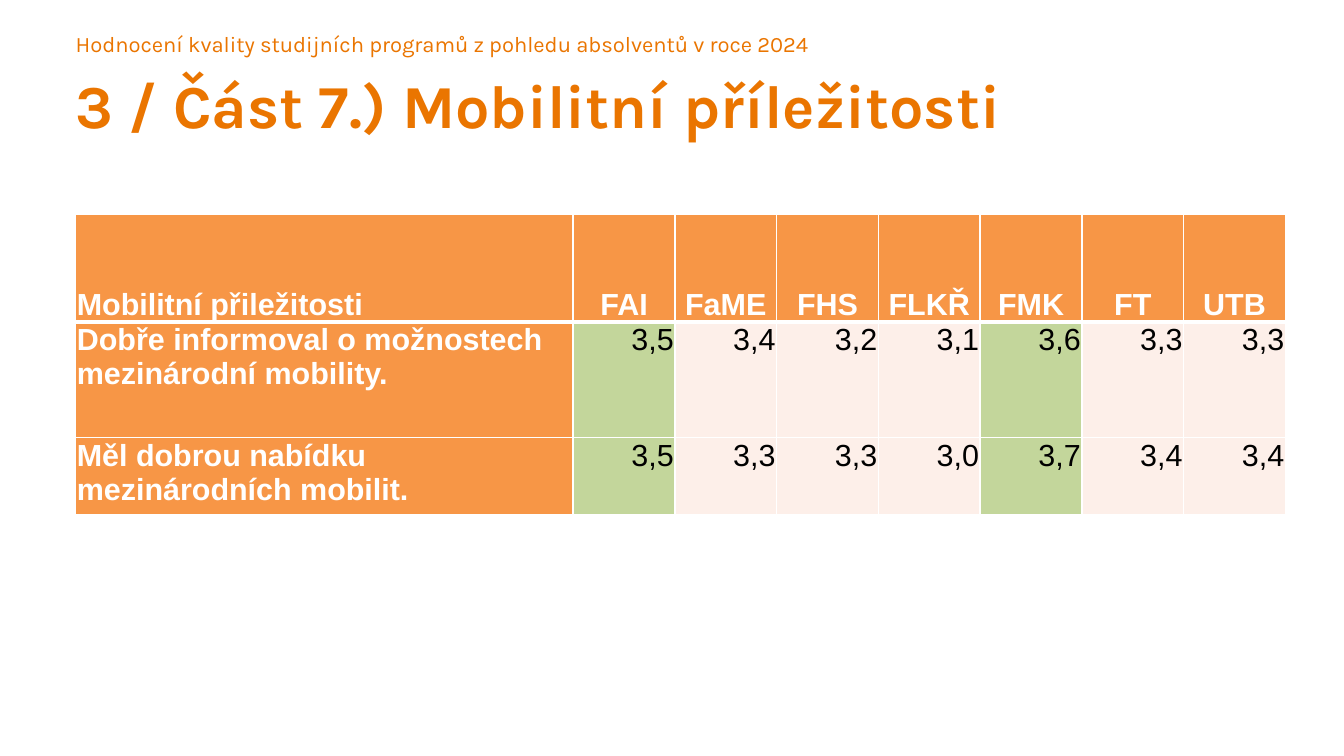
from dataclasses import dataclass

from lxml.etree import SubElement
from pptx import Presentation
from pptx.dml.color import RGBColor
from pptx.enum.text import MSO_ANCHOR as Anchor, PP_ALIGN as Align
from pptx.oxml.ns import qn
from pptx.util import Inches, Pt


@dataclass(frozen=True)
class Theme:
    accent: str = "EA7500"
    header: str = "F79646"
    best: str = "C3D69B"
    plain: str = "FDEFE9"
    white: str = "FFFFFF"
    black: str = "000000"
    heading_font: str = "Karla"
    table_font: str = "Arial"
    kicker_size: int = 13
    title_size: int = 36
    table_size: int = 18


THEME = Theme()
FACULTIES = ["FAI", "FaME", "FHS", "FLKŘ", "FMK", "FT", "UTB"]
BEST_FACULTIES = {"FAI", "FMK"}
RATINGS = {
    "Dobře informoval o možnostech mezinárodní mobility.":
        ["3,5", "3,4", "3,2", "3,1", "3,6", "3,3", "3,3"],
    "Měl dobrou nabídku mezinárodních mobilit.":
        ["3,5", "3,3", "3,3", "3,0", "3,7", "3,4", "3,4"],
}


def write_text(frame, text, *, size, font, color, bold=False, align=Align.LEFT,
               spacing=None):
    frame.word_wrap = True
    paragraph = frame.paragraphs[0]
    paragraph.alignment = align
    paragraph.line_spacing = spacing
    run = paragraph.add_run()
    run.text = text
    run.font.size = Pt(size)
    run.font.name = font
    run.font.bold = bold
    run.font.color.rgb = RGBColor.from_string(color)


def place_heading(shape, box, text, **text_format):
    shape.left, shape.top, shape.width, shape.height = map(Inches, box)
    frame = shape.text_frame
    frame.margin_left = frame.margin_top = 0
    frame.margin_right = frame.margin_bottom = 0
    frame.vertical_anchor = Anchor.TOP
    write_text(frame, text, font=THEME.heading_font, color=THEME.accent,
               **text_format)


def add_headings(slide, box):
    left, top, width, height = box
    kicker = slide.shapes.add_textbox(0, 0, 0, 0)
    place_heading(kicker, (left, top, width, 0.22),
                  "Hodnocení kvality studijních programů z pohledu absolventů v roce 2024",
                  size=THEME.kicker_size)
    place_heading(slide.shapes.title, (left, top + 0.3, width, height - 0.3),
                  "3 / Část 7.) Mobilitní příležitosti",
                  size=THEME.title_size, bold=True)


def draw_borders(cell, bottom):
    properties = cell._tc.get_or_add_tcPr()
    for side, width in (("L", 1), ("R", 1), ("T", 1), ("B", bottom)):
        line = SubElement(properties, qn(f"a:ln{side}"), w=str(Pt(width)))
        fill = SubElement(line, qn("a:solidFill"))
        SubElement(fill, qn("a:srgbClr"), val=THEME.white)


def fill_cell(cell, text, *, fill, side=0.01, top=0.01, anchor=Anchor.TOP,
              bottom_border=1, color=THEME.white, **text_format):
    cell.margin_left = cell.margin_right = Inches(side)
    cell.margin_top, cell.margin_bottom = Inches(top), 0
    cell.vertical_anchor = anchor
    draw_borders(cell, bottom_border)
    cell.fill.solid()
    cell.fill.fore_color.rgb = RGBColor.from_string(fill)
    write_text(cell.text_frame, text, size=THEME.table_size,
               font=THEME.table_font, color=color, **text_format)


def add_ratings_table(slide, box):
    left, top, width, height = box
    row_heights = [0.88, 0.95, height - 0.88 - 0.95]
    label_width = 4.08
    rating_width = (width - label_width) / len(FACULTIES)
    table = slide.shapes.add_table(
        len(RATINGS) + 1, len(FACULTIES) + 1, *map(Inches, box)).table
    for row, row_height in zip(table.rows, row_heights):
        row.height = Inches(row_height)
    for index, column in enumerate(table.columns):
        column.width = Inches(rating_width if index else label_width)

    header = {"fill": THEME.header, "bold": True, "anchor": Anchor.BOTTOM,
              "bottom_border": 3}
    fill_cell(table.cell(0, 0), "Mobilitní přiležitosti", **header)
    for column, faculty in enumerate(FACULTIES, 1):
        fill_cell(table.cell(0, column), faculty, side=0.05, top=0,
                  align=Align.CENTER, spacing=1.5, **header)

    for row, (statement, ratings) in enumerate(RATINGS.items(), 1):
        fill_cell(table.cell(row, 0), statement, fill=THEME.header, bold=True)
        for column, (faculty, rating) in enumerate(zip(FACULTIES, ratings), 1):
            fill = THEME.best if faculty in BEST_FACULTIES else THEME.plain
            fill_cell(table.cell(row, column), rating, fill=fill,
                      color=THEME.black, align=Align.RIGHT)


def main():
    presentation = Presentation()
    presentation.slide_width = Inches(11.02)
    presentation.slide_height = Inches(6.2)
    slide = presentation.slides.add_slide(presentation.slide_layouts[5])
    add_headings(slide, (0.62, 0.25, 9.92, 1.51))
    add_ratings_table(slide, (0.62, 1.76, 9.92, 2.46))
    presentation.save("out.pptx")


if __name__ == "__main__":
    main()
